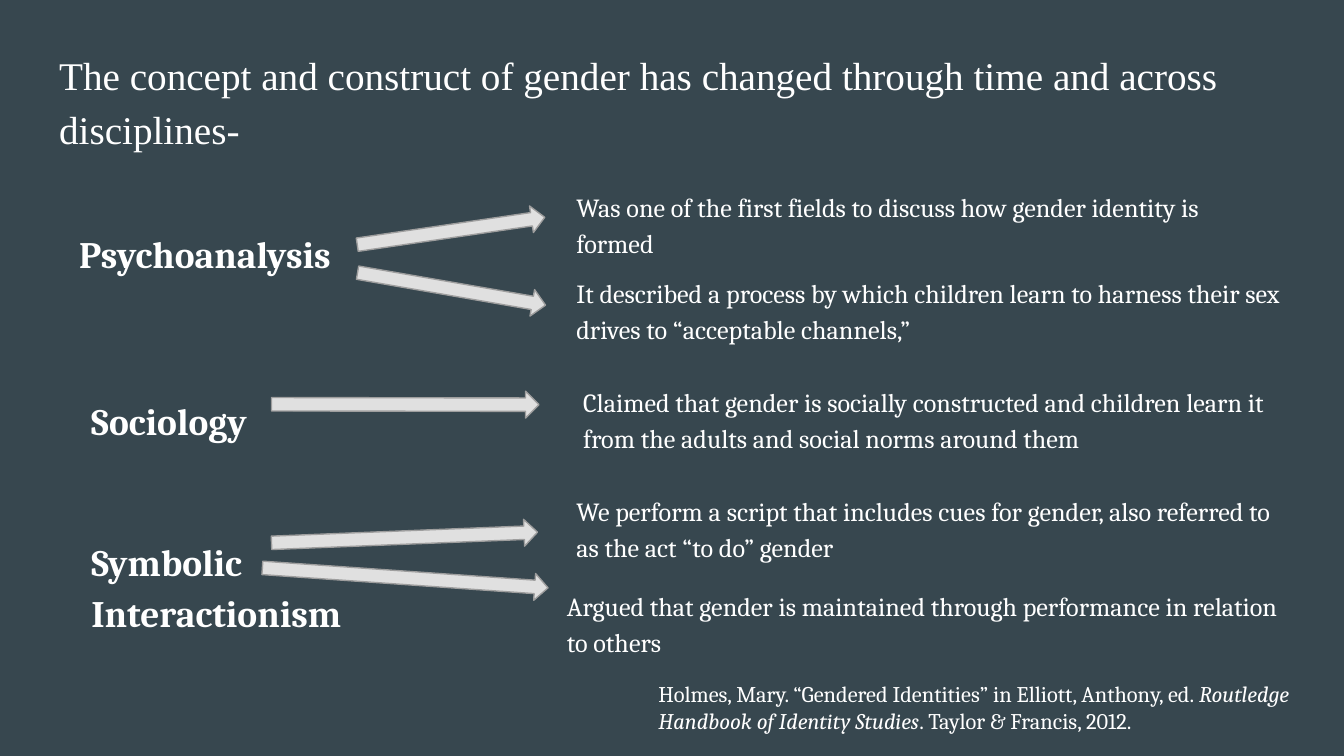
from pptx import Presentation
from pptx.dml.color import RGBColor
from pptx.enum import shapes, text
from pptx.util import Pt

HEX = {"back": "37474F", "text": "FFFFFF", "arrow": "E0E0E0", "edge": "9E9E9E"}
SERIF, BODY = "Times New Roman", "Cambria"

TITLE = ("The concept and construct of gender has changed "
         "through time and across disciplines-")

# text, left, top, width, height, line spacing
FIELDS = [
    ("Psychoanalysis", 35.3, 116.6, 155.5, 38.9, 1),
    ("Sociology", 41.8, 202.3, 126.7, 38.9, 1.15),
    ("Symbolic Interactionism", 41.8, 277.9, 173.5, 67, 1.15),
]

# text, left, top, width
CLAIMS = [
    ("Was one of the first fields to discuss how gender identity is formed",
     301.7, 92.9, 353.5),
    ("It described a process by which children learn to harness their sex "
     "drives to “acceptable channels,”", 301.7, 139, 401.8),
    ("Claimed that gender is socially constructed and children learn it "
     "from the adults and social norms around them", 305.3, 197.3, 385.2),
    ("We perform a script that includes cues for gender, also referred to "
     "as the act “to do” gender", 301.7, 255.6, 391.7),
    ("Argued that gender is maintained through performance in relation "
     "to others", 296.6, 306.7, 401.8),
]
CLAIM_H = 51.1

# text, italic
CITE = [
    ("Holmes, Mary. “Gendered Identities” in Elliott, Anthony, ed. ", False),
    ("Routledge Handbook of Identity Studies", True),
    (". Taylor & Francis, 2012.", False),
]

# centre x, centre y, length, angle in degrees
ARROWS = [
    (241.6, 123.8, 101.5, -8.3),
    (241.9, 154.8, 102.2, 9.8),
    (217.1, 216.7, 143.3, 0.1),
    (216.7, 288, 142.6, -2.3),
    (217.1, 309.6, 153.4, 4),
]
ARROW_H = 14.4


def color(name):
    return RGBColor.from_string(HEX[name])


def write(shape, runs, size, font=BODY, bold=False, lines=1.15, after=16):
    """Fill a shape with one paragraph of (text, italic) runs."""
    frame = shape.text_frame
    frame.word_wrap = True
    frame.auto_size = text.MSO_AUTO_SIZE.NONE
    frame.vertical_anchor = text.MSO_ANCHOR.TOP
    frame.margin_left = frame.margin_right = Pt(7.2)
    frame.margin_top = frame.margin_bottom = Pt(7.2)
    para = frame.paragraphs[0]
    para.alignment = text.PP_ALIGN.LEFT
    para.line_spacing = lines
    para.space_before, para.space_after = Pt(0), Pt(after)
    for words, italic in runs:
        run = para.add_run()
        run.text = words
        run.font.name, run.font.size = font, Pt(size)
        run.font.bold, run.font.italic = bold, italic
        run.font.color.rgb = color("text")


def add_text(slide, box, runs, size, **form):
    shape = slide.shapes.add_textbox(*map(Pt, box))
    write(shape, runs, size, **form)


def add_arrow(slide, x, y, length, angle):
    shape = slide.shapes.add_shape(
        shapes.MSO_SHAPE.RIGHT_ARROW, Pt(x - length / 2), Pt(y - ARROW_H / 2),
        Pt(length), Pt(ARROW_H))
    shape.rotation = angle
    shape.shadow.inherit = False
    shape.fill.solid()
    shape.fill.fore_color.rgb = color("arrow")
    shape.line.color.rgb = color("edge")
    shape.line.width = Pt(0.75)


def main():
    deck = Presentation()
    deck.slide_width, deck.slide_height = Pt(720), Pt(405)
    slide = deck.slides.add_slide(deck.slide_layouts[5])
    slide.background.fill.solid()
    slide.background.fill.fore_color.rgb = color("back")

    title = slide.shapes.title
    title.left, title.top = Pt(24.5), Pt(16.6)
    title.width, title.height = Pt(671), Pt(87.1)
    write(title, [(TITLE, False)], 21, font=SERIF)

    for words, *box, lines in FIELDS:
        add_text(slide, box, [(words, False)], 20, bold=True, lines=lines)
    for words, *box in CLAIMS:
        add_text(slide, (*box, CLAIM_H), [(words, False)], 14)
    add_text(slide, (345.6, 357.1, 370.1, 43.9), CITE, 12, lines=1, after=0)
    for arrow in ARROWS:
        add_arrow(slide, *arrow)

    deck.save("out.pptx")


if __name__ == "__main__":
    main()
